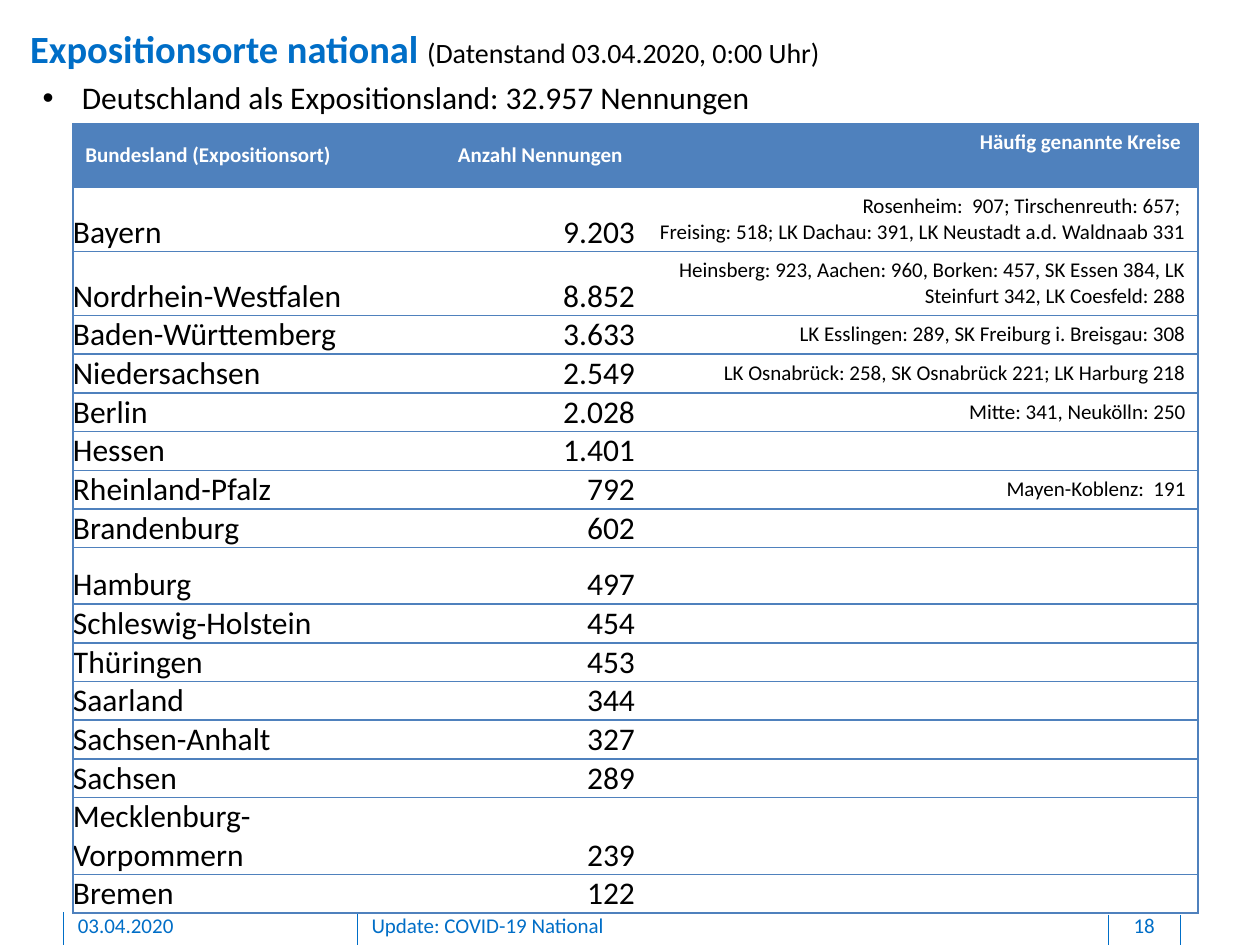
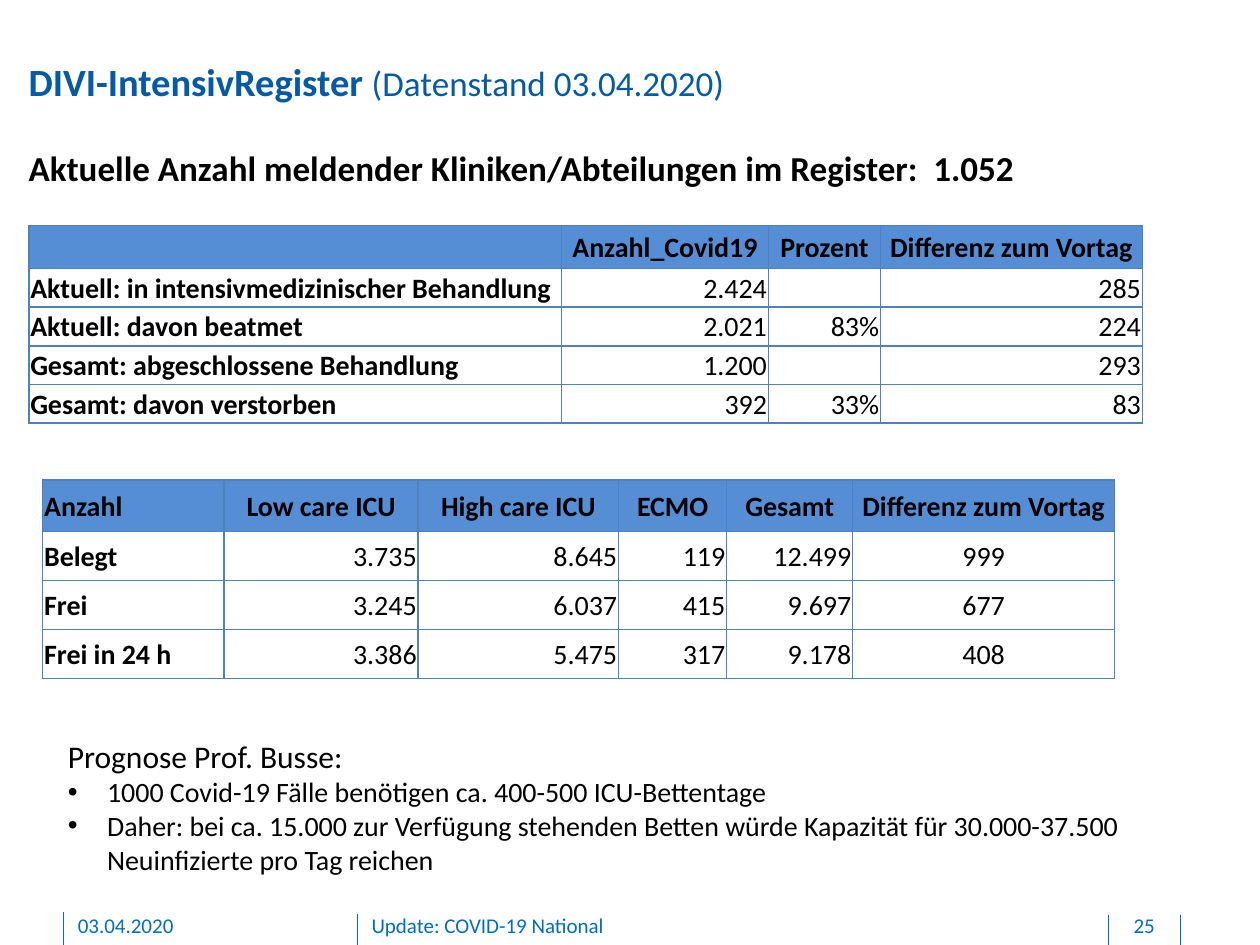
from dataclasses import dataclass

from lxml import etree
from pptx import Presentation
from pptx.dml.color import RGBColor
from pptx.enum.shapes import MSO_CONNECTOR
from pptx.enum.text import MSO_ANCHOR, PP_ALIGN
from pptx.oxml.ns import qn
from pptx.util import Cm, Pt

STRAIGHT = MSO_CONNECTOR.STRAIGHT
TOP, MIDDLE, BOTTOM = MSO_ANCHOR.TOP, MSO_ANCHOR.MIDDLE, MSO_ANCHOR.BOTTOM
LEFT, CENTER, RIGHT = PP_ALIGN.LEFT, PP_ALIGN.CENTER, PP_ALIGN.RIGHT


@dataclass(frozen=True)
class Theme:
    font: str = "Calibri"
    blue: str = "006EC7"
    navy: str = "045AA6"
    black: str = "000000"
    white: str = "FFFFFF"
    grid: str = "4F81BD"
    header: str = "558ED5"
    title: int = 22
    heading: int = 20
    body: int = 18
    medium: int = 16
    small: int = 12


THEME = Theme()
DATE = "03.04.2020"
TOPIC = "Update: COVID-19 National"
WIDE_INSETS = (0.25, 0.13, 0.25, 0.13)
TIGHT_INSETS = (0.03, 0.03, 0.03, 0)
NO_INSETS = (0, 0, 0, 0)


class Deck:
    def __init__(self, theme):
        self.theme = theme
        self.prs = Presentation()
        self.prs.slide_width, self.prs.slide_height = Cm(25.4), Cm(19.05)
        self.s = None

    def slide(self, number):
        self.s = self.prs.slides.add_slide(self.prs.slide_layouts[6])
        for x, y in ((7.21, 18.42), (1.27, 18.39), (23.8, 18.44), (22.35, 18.44)):
            self.line(x, y, x, 19.05)
        for x, w, text, align in (
            (1.57, 5.16, DATE, LEFT),
            (7.49, 14.4, TOPIC, LEFT),
            (22.38, 1.37, str(number), CENTER),
        ):
            tf = self.box(x, 18.39, w, 0.53, (0, 0, 0, 0.13))
            tf.text = text
            self.style(tf.paragraphs[0], self.theme.small, self.theme.blue, align=align)

    def line(self, x1, y1, x2, y2):
        c = self.s.shapes.add_connector(STRAIGHT, Cm(x1), Cm(y1), Cm(x2), Cm(y2))
        c.line.color.rgb = RGBColor.from_string(self.theme.blue)
        c.line.width = Pt(0.5)
        etree.SubElement(c.element.spPr, qn("a:effectLst"))

    def box(self, x, y, w, h, insets=WIDE_INSETS):
        tf = self.s.shapes.add_textbox(Cm(x), Cm(y), Cm(w), Cm(h)).text_frame
        tf.word_wrap = True
        self.inset(tf, insets)
        return tf

    def inset(self, target, insets):
        (target.margin_left, target.margin_top,
         target.margin_right, target.margin_bottom) = map(Cm, insets)

    def format_run(self, r, size, color, bold=False):
        r.font.name = self.theme.font
        r.font.size = Pt(size)
        r.font.bold = bold
        r.font.color.rgb = RGBColor.from_string(color)

    def style(self, p, size, color, bold=False, align=LEFT):
        p.alignment = align
        for r in p.runs:
            self.format_run(r, size, color, bold)

    def title(self, x, y, h, name, name_color, note, note_size, note_color):
        tf = self.box(x, y, 22.48, h, NO_INSETS)
        p = tf.paragraphs[0]
        p.text = name
        self.style(p, self.theme.title, name_color, True)
        r = p.add_run()
        r.text = note
        self.format_run(r, note_size, note_color)
        return tf

    def bullet(self, p, size):
        pPr = p._p.get_or_add_pPr()
        pPr.set("marL", str(Cm(0.79)))
        pPr.set("indent", str(Cm(-0.79)))
        etree.SubElement(pPr, qn("a:buFont")).set("typeface", "Arial")
        etree.SubElement(pPr, qn("a:buChar")).set("char", "•")
        self.style(p, size, self.theme.black)

    def table(self, x, y, widths, heights):
        frame = self.s.shapes.add_table(
            len(heights), len(widths), Cm(x), Cm(y), Cm(sum(widths)), Cm(sum(heights)))
        table = frame.table
        table.first_row = table.horz_banding = False
        for column, w in zip(table.columns, widths):
            column.width = Cm(w)
        for row, h in zip(table.rows, heights):
            row.height = Cm(h)
        return table

    def cell(self, cell, text, size, color, bold, align, anchor, insets, fill, sides="LRTB"):
        cell.text_frame.text = text
        for p in cell.text_frame.paragraphs:
            self.style(p, size, color, bold, align)
        cell.vertical_anchor = anchor
        self.inset(cell, insets if text else NO_INSETS)
        self.borders(cell, sides)
        if fill:
            cell.fill.solid()
            cell.fill.fore_color.rgb = RGBColor.from_string(fill)
        else:
            cell.fill.background()

    def borders(self, cell, sides):
        tcPr = cell._tc.get_or_add_tcPr()
        for side in "LRTB":
            ln = etree.SubElement(tcPr, qn(f"a:ln{side}"))
            if side in sides:
                ln.set("w", str(Pt(1)))
                fill = etree.SubElement(ln, qn("a:solidFill"))
                etree.SubElement(fill, qn("a:srgbClr")).set("val", self.theme.grid)
            else:
                etree.SubElement(ln, qn("a:noFill"))

    def register_table(self, x, y, widths, heights, rows, header_aligns, aligns):
        t = self.theme
        table = self.table(x, y, widths, heights)
        for i, row in enumerate(rows):
            for j, text in enumerate(row):
                self.cell(
                    table.cell(i, j), text, t.medium, t.black, i == 0 or j == 0,
                    (aligns if i else header_aligns)[j], MIDDLE, TIGHT_INSETS,
                    None if i else t.header)


EXPOSURE_HEADER = ("Bundesland (Expositionsort)", "Anzahl Nennungen", "Häufig genannte Kreise ")
EXPOSURES = [
    ("Bayern", "9.203", "Rosenheim:  907; Tirschenreuth: 657; \n"
     "Freising: 518; LK Dachau: 391, LK Neustadt a.d. Waldnaab 331"),
    ("Nordrhein-Westfalen", "8.852", "Heinsberg: 923, Aachen: 960, Borken: 457, "
     "SK Essen 384, LK Steinfurt 342, LK Coesfeld: 288"),
    ("Baden-Württemberg", "3.633", "LK Esslingen: 289, SK Freiburg i. Breisgau: 308"),
    ("Niedersachsen", "2.549", "LK Osnabrück: 258, SK Osnabrück 221; LK Harburg 218"),
    ("Berlin", "2.028", "Mitte: 341, Neukölln: 250"),
    ("Hessen", "1.401", ""),
    ("Rheinland-Pfalz", "792", "Mayen-Koblenz:  191"),
    ("Brandenburg", "602", ""),
    ("Hamburg", "497", ""),
    ("Schleswig-Holstein", "454", ""),
    ("Thüringen", "453", ""),
    ("Saarland", "344", ""),
    ("Sachsen-Anhalt", "327", ""),
    ("Sachsen", "289", ""),
    ("Mecklenburg-Vorpommern", "239", ""),
    ("Bremen", "122", ""),
]
TALL_ROWS = {"Bayern": 1.29, "Nordrhein-Westfalen": 1.29,
             "Hamburg": 1.14, "Mecklenburg-Vorpommern": 1.55}

TREATMENTS = [
    ("", "Anzahl_Covid19", "Prozent", "Differenz zum Vortag"),
    ("Aktuell: in intensivmedizinischer Behandlung", "2.424", "", "285"),
    ("Aktuell: davon beatmet", "2.021", "83%", "224"),
    ("Gesamt: abgeschlossene Behandlung", "1.200", "", "293"),
    ("Gesamt: davon verstorben", "392", "33%", "83"),
]
BEDS = [
    ("Anzahl", "Low care ICU", "High care ICU", "ECMO", "Gesamt", "Differenz zum Vortag"),
    ("Belegt", "3.735", "8.645", "119", "12.499", "999"),
    ("Frei", "3.245", "6.037", "415", "9.697", "677"),
    ("Frei in 24 h", "3.386", "5.475", "317", "9.178", "408"),
]
FORECAST = [
    "Prognose Prof. Busse:",
    "1000 Covid-19 Fälle benötigen ca. 400-500 ICU-Bettentage",
    "Daher: bei ca. 15.000 zur Verfügung stehenden Betten würde Kapazität "
    "für 30.000-37.500 Neuinfizierte pro Tag reichen",
]


def exposure_slide(deck):
    t = deck.theme
    deck.slide(18)
    deck.title(0.61, 0.51, 0.94, "Expositionsorte national ", t.blue,
               "(Datenstand 03.04.2020, 0:00 Uhr)", t.medium, t.black)
    heights = [1.29] + [TALL_ROWS.get(row[0], 0.78) for row in EXPOSURES]
    table = deck.table(1.47, 2.49, (6.5, 4.83, 11.35), heights)
    edges = ("LTB", "TB", "RTB")
    for j, text in enumerate(EXPOSURE_HEADER):
        deck.cell(table.cell(0, j), text, t.small, t.white, True, RIGHT if j else LEFT,
                  TOP if j == 2 else MIDDLE, WIDE_INSETS, t.grid, edges[j])
    for i, row in enumerate(EXPOSURES, 1):
        for j, text in enumerate(row):
            size, anchor, insets = (
                (t.small, MIDDLE, WIDE_INSETS) if j == 2 else (t.body, BOTTOM, NO_INSETS))
            deck.cell(table.cell(i, j), text, size, t.black, False,
                      RIGHT if j else LEFT, anchor, insets, t.white, edges[j])
    tf = deck.box(0.61, 1.45, 15.2, 1.02)
    tf.text = "Deutschland als Expositionsland: 32.957 Nennungen"
    deck.bullet(tf.paragraphs[0], t.body)


def register_slide(deck):
    t = deck.theme
    deck.slide(25)
    tf = deck.title(0.58, 1.17, 4.37, "DIVI-IntensivRegister ", t.navy,
                    "(Datenstand 03.04.2020)", t.heading, t.navy)
    p = tf.add_paragraph()
    p.text = "Aktuelle Anzahl meldender Kliniken/Abteilungen im Register:  1.052"
    p.space_before = Pt(24)
    deck.style(p, t.heading, t.black, True)
    deck.register_table(0.58, 4.55, (10.74, 4.17, 2.26, 5.28), [0.86] + [0.78] * 4,
                        TREATMENTS, [CENTER] * 4, [LEFT] + [RIGHT] * 3)
    deck.register_table(0.86, 9.68, (3.66, 3.91, 4.04, 2.18, 2.54, 5.28),
                        [1.03] + [0.99] * 3, BEDS,
                        [LEFT] + [CENTER] * 5, [LEFT] + [RIGHT] * 4 + [CENTER])
    tf = deck.box(1.12, 14.73, 22.91, 3.07)
    tf.text = "\n".join(FORECAST)
    heading, *points = tf.paragraphs
    deck.style(heading, t.body, t.black)
    for p in points:
        deck.bullet(p, t.medium)


def main():
    deck = Deck(THEME)
    exposure_slide(deck)
    register_slide(deck)
    deck.prs.save("out.pptx")


if __name__ == "__main__":
    main()
